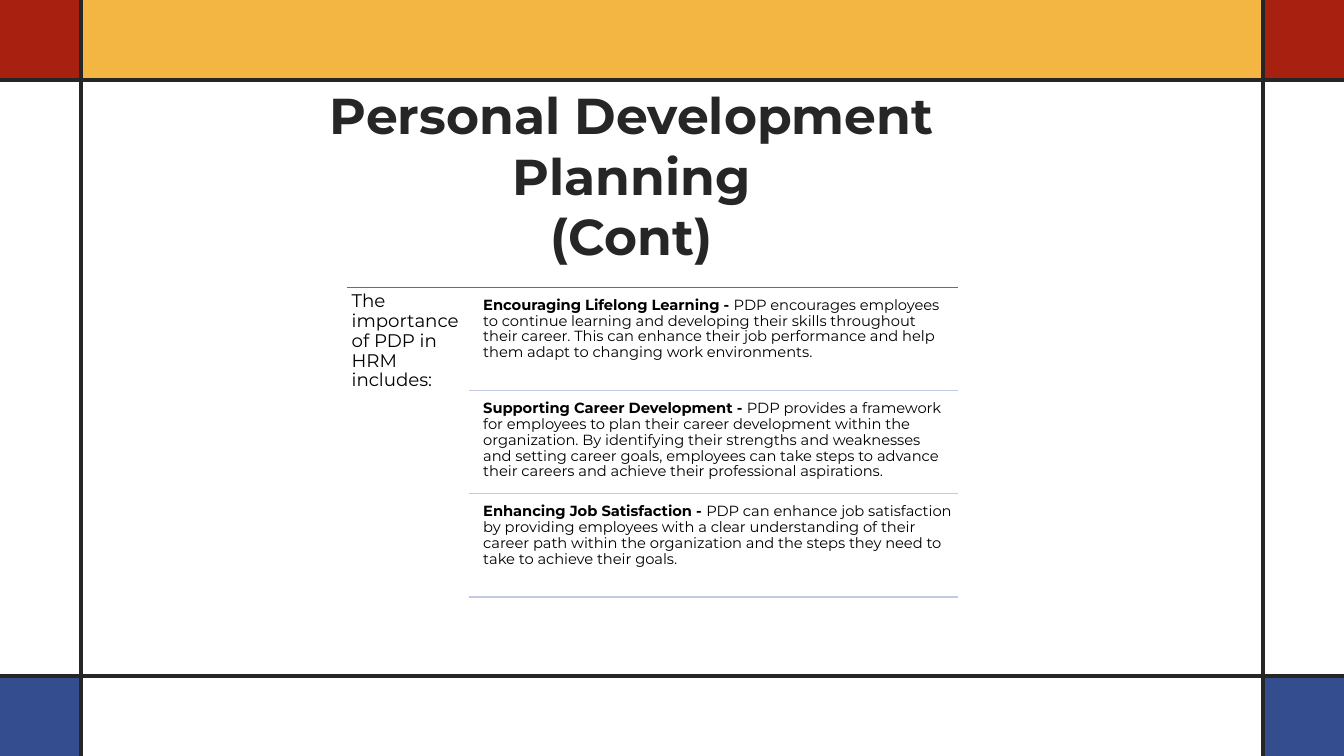
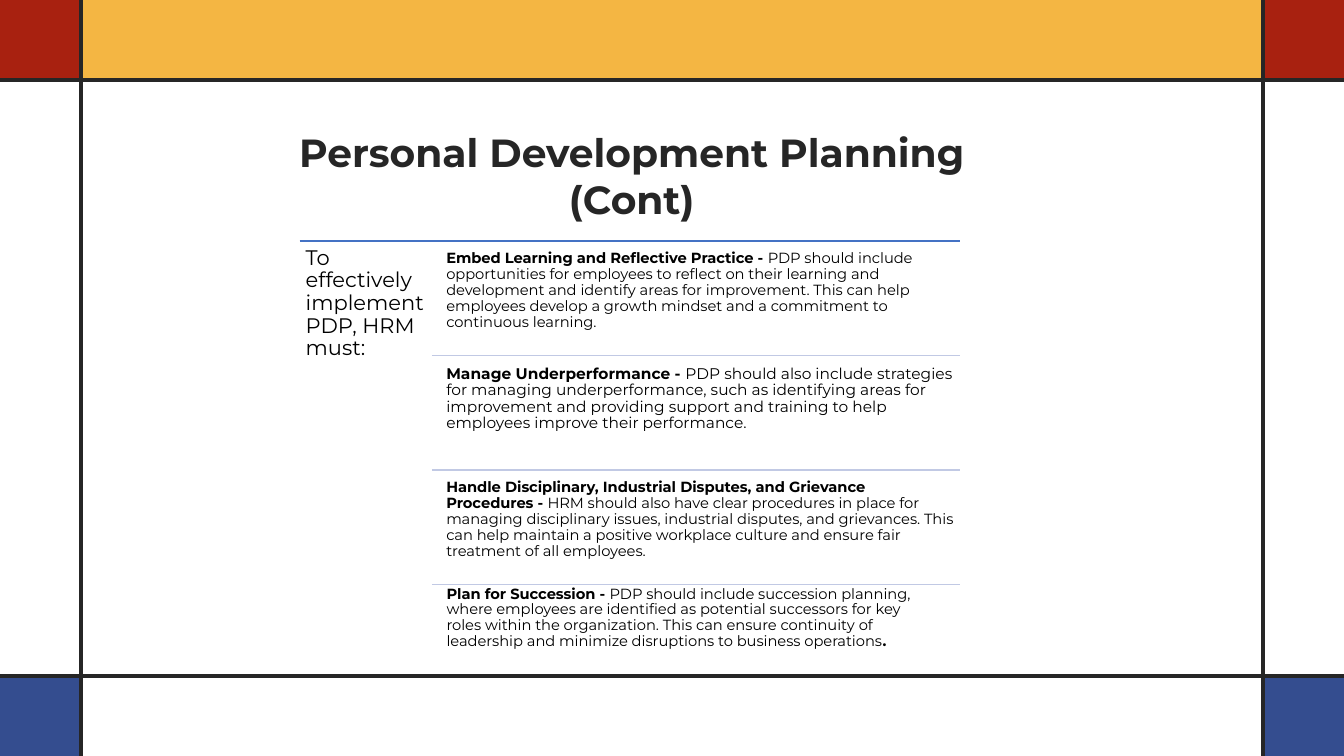
"""Build two slides on personal development planning in a red, yellow and blue frame."""
from itertools import product

from lxml.etree import SubElement
from pptx import Presentation
from pptx.dml.color import RGBColor
from pptx.enum.shapes import MSO_CONNECTOR, MSO_SHAPE
from pptx.enum.text import MSO_ANCHOR, MSO_AUTO_SIZE, PP_ALIGN
from pptx.oxml.ns import qn
from pptx.util import Inches, Pt

COLORS = {
    "band": "F4B643", "top_corner": "A82110", "bottom_corner": "344D8F",
    "ink": "262626", "text": "000000", "top_rule": "4472C4", "rule": "C1C9E4",
}
FONT = "Montserrat"
WIDTH, HEIGHT = Inches(13.33), Inches(7.5)
COLUMN, ROW = WIDTH / 100, HEIGHT / 100
EDGE_X, EDGE_Y = 6, 10.6
TITLE = "Personal Development Planning\n(Cont)"


def color(name):
    return RGBColor.from_string(COLORS[name])


def place(left, top, width, height):
    return (round(left * COLUMN), round(top * ROW),
            round(width * COLUMN), round(height * ROW))


def add_block(slide, box, fill):
    block = slide.shapes.add_shape(MSO_SHAPE.RECTANGLE, *place(*box))
    block.shadow.inherit = False
    block.fill.solid()
    block.fill.fore_color.rgb = color(fill)
    block.line.fill.background()


def add_rule(slide, start, end, stroke, weight=1):
    rule = slide.shapes.add_connector(MSO_CONNECTOR.STRAIGHT, *place(*start, *end))
    rule.line.color.rgb = color(stroke)
    rule.line.width = Pt(weight)
    SubElement(rule.element.spPr, qn("a:effectLst"))


def style(paragraph, size, ink):
    paragraph.font.name = FONT
    paragraph.font.size = Pt(size)
    paragraph.font.color.rgb = color(ink)


def add_text(slide, box, runs, size, inset=0.05):
    frame = slide.shapes.add_textbox(*place(*box)).text_frame
    frame.word_wrap = True
    frame.margin_left = frame.margin_right = Inches(inset)
    frame.margin_top = frame.margin_bottom = Inches(inset)
    paragraph = frame.paragraphs[0]
    paragraph.line_spacing = 0.9
    style(paragraph, size, "text")
    for words, bold in runs:
        run = paragraph.add_run()
        run.text = words
        run.font.bold = bold


def add_title(slide, box, size):
    title = slide.shapes.title
    title.left, title.top, title.width, title.height = place(*box)
    frame = title.text_frame
    frame.text = TITLE
    frame.word_wrap = True
    frame.auto_size = MSO_AUTO_SIZE.NONE
    frame.vertical_anchor = MSO_ANCHOR.MIDDLE
    for paragraph in frame.paragraphs:
        paragraph.alignment = PP_ALIGN.CENTER
        style(paragraph, size, "ink")
        paragraph.font.bold = True


def add_frame(slide, layout):
    """Draw the frame once and move it into the layout, behind its title."""
    for placeholder in list(layout.placeholders)[1:]:
        layout.shapes.element.remove(placeholder.element)
    add_block(slide, (EDGE_X, 0, 100 - 2 * EDGE_X, EDGE_Y), "band")
    corners = ((0, "top_corner"), (100 - EDGE_Y, "bottom_corner"))
    for left, (top, fill) in product((0, 100 - EDGE_X), corners):
        add_block(slide, (left, top, EDGE_X, EDGE_Y), fill)
    for y in (EDGE_Y, 100 - EDGE_Y):
        add_rule(slide, (0, y), (100, y), "ink", 2.75)
    for x in (EDGE_X, 100 - EDGE_X):
        add_rule(slide, (x, 0), (x, 100), "ink", 2.75)
    parts = [shape for shape in slide.shapes if not shape.is_placeholder]
    for position, part in enumerate(parts, start=2):
        layout.shapes.element.insert(position, part.element)


def add_points(slide, left, right, top, step, lead_width, lead, points):
    """Set a lead beside ruled rows of (heading, explanation, size)."""
    words, lead_size, lead_inset = lead
    divide = left + lead_width
    text_left = divide + 0.7
    add_rule(slide, (left, top), (right, top), "top_rule")
    add_text(slide, (left, top, lead_width, 3 * step), [(words, False)], lead_size, lead_inset)
    for row, (heading, explanation, size) in enumerate(points):
        row_top = top + row * step
        add_text(slide, (text_left, row_top + 0.7, right - text_left, step - 0.7),
                 [(heading, True), (explanation, False)], size)
        add_rule(slide, (divide, row_top + step), (right, row_top + step), "rule")


def main():
    presentation = Presentation()
    presentation.slide_width, presentation.slide_height = WIDTH, HEIGHT
    layout = presentation.slide_layouts[5]

    importance = presentation.slides.add_slide(layout)
    add_frame(importance, layout)
    add_title(importance, (15, 14.4, 64, 17.5), 36)
    add_points(
        importance, 25.8, 71.25, 38, 13.65, 9.08,
        ("The importance of PDP in HRM includes:", 13, 0.05),
        [
            ("Encouraging Lifelong Learning - ",
             "PDP encourages employees to continue learning and developing their skills "
             "throughout their career. This can enhance their job performance and help "
             "them adapt to changing work environments.", 10.5),
            ("Supporting Career Development - ",
             "PDP provides a framework for employees to plan their career development "
             "within the organization. By identifying their strengths and weaknesses and "
             "setting career goals, employees can take steps to advance their careers and "
             "achieve their professional aspirations.", 10.5),
            ("Enhancing Job Satisfaction - ",
             "PDP can enhance job satisfaction by providing employees with a clear "
             "understanding of their career path within the organization and the steps "
             "they need to take to achieve their goals.", 10.5),
        ])

    implementation = presentation.slides.add_slide(layout)
    add_title(implementation, (15, 16.3, 64, 13.9), 28)
    add_points(
        implementation, 22.3, 71.42, 31.87, 15.15, 9.83,
        ("To effectively implement PDP, HRM must:", 15, 0.06),
        [
            ("Embed Learning and Reflective Practice - ",
             "PDP should include opportunities for employees to reflect on their learning "
             "and development and identify areas for improvement. This can help employees "
             "develop a growth mindset and a commitment to continuous learning.", 10.5),
            ("Manage Underperformance - ",
             "PDP should also include strategies for managing underperformance, such as "
             "identifying areas for improvement and providing support and training to help "
             "employees improve their performance.", 11),
            ("Handle Disciplinary, Industrial Disputes, and Grievance Procedures - ",
             "HRM should also have clear procedures in place for managing disciplinary "
             "issues, industrial disputes, and grievances. This can help maintain a "
             "positive workplace culture and ensure fair treatment of all employees.", 10.5),
        ])
    add_text(
        implementation, (32.85, 76.9, 35.7, 12.9),
        [
            ("Plan for Succession - ", True),
            ("PDP should include succession planning, where employees are identified as "
             "potential successors for key roles within the organization. This can ensure "
             "continuity of leadership and minimize disruptions to business operations", False),
            (".", True),
        ], 10.5)

    presentation.save("out.pptx")


if __name__ == "__main__":
    main()
